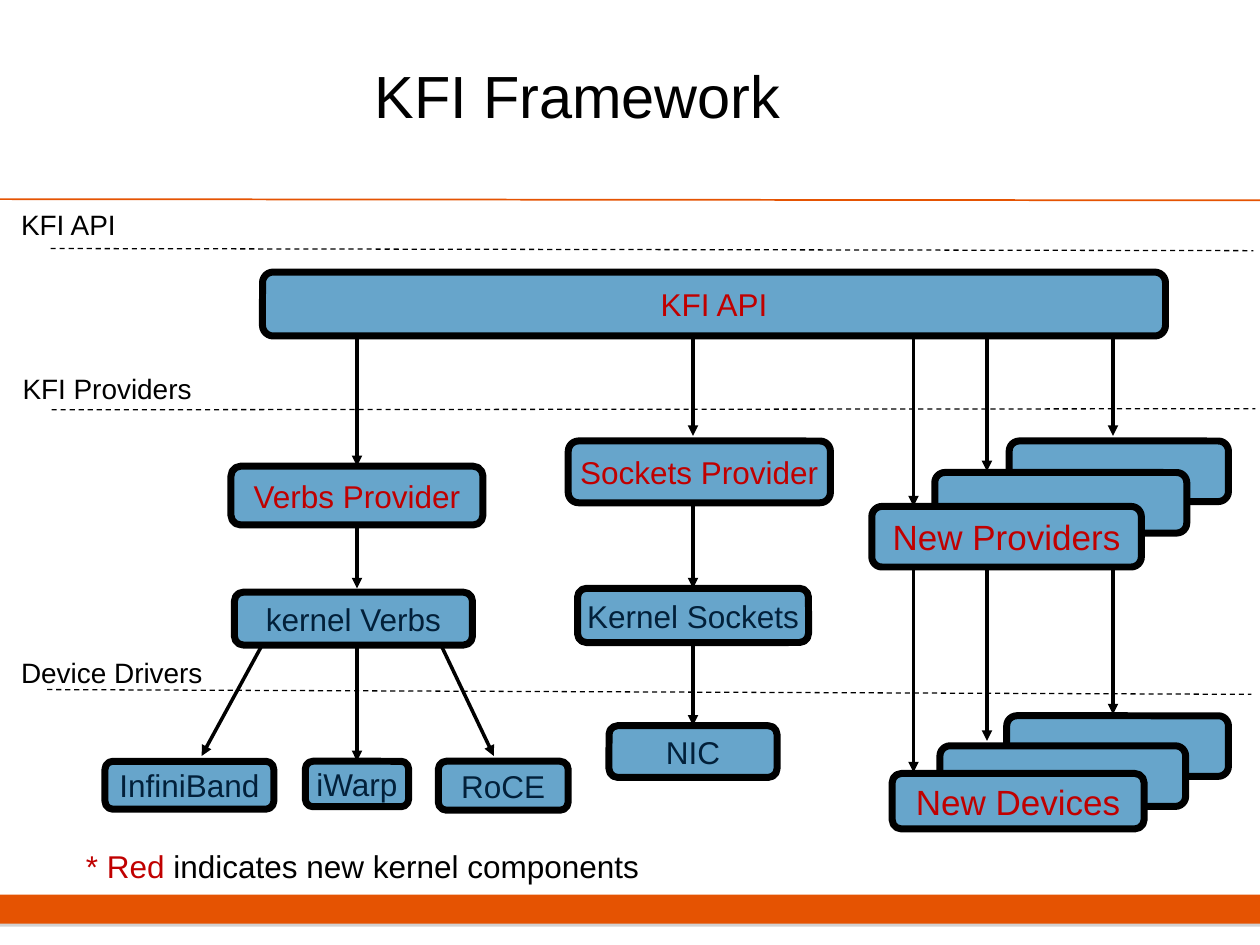
from lxml import etree
from pptx import Presentation
from pptx.dml.color import RGBColor
from pptx.enum.dml import MSO_LINE
from pptx.enum.shapes import MSO_CONNECTOR, MSO_SHAPE
from pptx.enum.text import MSO_ANCHOR, MSO_AUTO_SIZE, PP_ALIGN
from pptx.oxml.ns import qn
from pptx.util import Pt

RECT = MSO_SHAPE.RECTANGLE
ROUND = MSO_SHAPE.ROUNDED_RECTANGLE
CALLOUT = MSO_SHAPE.LINE_CALLOUT_1_NO_BORDER
STRAIGHT = MSO_CONNECTOR.STRAIGHT
DASH = MSO_LINE.DASH
MIDDLE = MSO_ANCHOR.MIDDLE
LEFT, CENTER = PP_ALIGN.LEFT, PP_ALIGN.CENTER
GROW = MSO_AUTO_SIZE.SHAPE_TO_FIT_TEXT
TOP, BOTTOM = 0, 2

ORANGE, BLUE, BLACK = "E55302", "67A5CB", "000000"
RED, NAVY, GRAY = "C00000", "02203A", "808080"


def rgb(value):
    return RGBColor.from_string(value)


def write(sp, runs, size, align=CENTER, **frame):
    tf = sp.text_frame
    for name, value in frame.items():
        setattr(tf, name, value)
    p = tf.paragraphs[0]
    p.alignment = align
    for text, color in runs:
        r = p.add_run()
        r.text = text
        for name, value in {"name": "Arial", "size": Pt(size)}.items():
            setattr(r.font, name, value)
        r.font.color.rgb = rgb(color)


def add_line(s, x1, y1, x2, y2, color, width):
    cn = s.shapes.add_connector(STRAIGHT, Pt(x1), Pt(y1), Pt(x2), Pt(y2))
    cn.line.color.rgb = rgb(color)
    cn.line.width = Pt(width)
    etree.SubElement(cn._element.spPr, qn("a:effectLst"))
    return cn


def add_arrow(s, x1, y1, x2, y2, begin=None, end=None):
    cn = add_line(s, x1, y1, x2, y2, BLACK, 2)
    etree.SubElement(cn.line._get_or_add_ln(), qn("a:tailEnd"), type="triangle")
    if begin is not None:
        cn.begin_connect(begin, BOTTOM)
    if end is not None:
        cn.end_connect(end, TOP)


def add_box(s, x, y, w, h, text="", color=NAVY, size=18):
    sp = s.shapes.add_shape(ROUND, Pt(x), Pt(y), Pt(w), Pt(h))
    sp.shadow.inherit = False
    sp.fill.solid()
    sp.fill.fore_color.rgb = rgb(BLUE)
    sp.line.color.rgb = rgb(BLACK)
    sp.line.width = Pt(4)
    if text:
        write(sp, [(text, color)], size, vertical_anchor=MIDDLE, word_wrap=False)
    return sp


def add_header(s, x, y, w, h):
    sp = s.shapes.add_textbox(Pt(x + 36), Pt(y + 18), Pt(588), Pt(72))
    write(sp, [("KFI Framework", BLACK)], 34,
          vertical_anchor=MIDDLE, word_wrap=True)
    add_line(s, x, y + h - 0.7, x + w, y + h, ORANGE, 1)


def add_footer(s, x, y, w, h):
    sp = s.shapes.add_shape(RECT, Pt(x), Pt(y), Pt(w), Pt(h))
    sp.shadow.inherit = False
    sp.fill.solid()
    sp.fill.fore_color.rgb = rgb(ORANGE)
    sp.line.fill.background()
    effects = sp._element.spPr.find(qn("a:effectLst"))
    shadow = etree.SubElement(effects, qn("a:outerShdw"), blurRad="0",
                              dist=str(Pt(1.8)), dir="5400000", rotWithShape="0")
    shade = etree.SubElement(shadow, qn("a:srgbClr"), val=GRAY)
    etree.SubElement(shade, qn("a:alpha"), val="35000")


def add_tier(s, x, y, w, h, text, adjustments):
    sp = s.shapes.add_shape(CALLOUT, Pt(x), Pt(y), Pt(w), Pt(h))
    sp.shadow.inherit = False
    sp.fill.background()
    sp.line.color.rgb = rgb(BLACK)
    sp.line.width = Pt(0.75)
    sp.line.dash_style = DASH
    for i, value in enumerate(adjustments):
        sp.adjustments[i] = value
    write(sp, [(text, BLACK)], 16, LEFT, vertical_anchor=MIDDLE, word_wrap=True)


def add_verbs(s, x, y):
    axis = x + 144
    provider = add_box(s, x + 72, y + 74.4, 144, 33.6, "Verbs Provider", RED)
    add_box(s, x + 74, y + 146.4, 136, 30.2, "kernel Verbs")
    add_box(s, x, y + 243, 96.5, 27.4, "InfiniBand")
    iwarp = add_box(s, x + 114.5, y + 243, 59, 26, "iWarp")
    add_box(s, x + 190.5, y + 243, 74.2, 28, "RoCE")
    add_arrow(s, axis, y, axis, y + 72, end=provider)
    add_arrow(s, axis, y + 108, axis, y + 144.2, begin=provider)
    add_arrow(s, x + 89.8, y + 176.6, x + 55.2, y + 240)
    add_arrow(s, axis, y + 176.6, axis, y + 240, end=iwarp)
    add_arrow(s, x + 192, y + 176.6, x + 222.2, y + 240)


def add_sockets(s, x, y):
    axis = x + 72
    add_box(s, x + 0.7, y + 60, 149.8, 35.3, "Sockets Provider", RED)
    kernel = add_box(s, x + 6, y + 144.2, 132, 31, "Kernel Sockets")
    nic = add_box(s, x + 24, y + 222.7, 96, 29.5, "NIC")
    add_arrow(s, axis, y, axis, y + 57.1)
    add_arrow(s, axis, y + 97.4, axis, y + 144.2, end=kernel)
    add_arrow(s, axis, y + 175.2, axis, y + 222.7, begin=kernel, end=nic)


def add_stack(s, x, y, boxes, text, arrow_top, arrow_ends):
    *back, front = boxes
    for dx, dy, w, h in back:
        add_box(s, x + dx, y + dy, w, h)
    dx, dy, w, h = front
    add_box(s, x + dx, y + dy, w, h, text, RED, 20)
    for ax, end in zip((24, 66, 138), arrow_ends):
        add_arrow(s, x + ax, y + arrow_top, x + ax, y + end)


def add_legend(s, x, y, w, h):
    sp = s.shapes.add_textbox(Pt(x), Pt(y), Pt(w), Pt(h))
    write(sp, [("* Red", RED), (" indicates new kernel components", BLACK)], 18,
          LEFT, word_wrap=True, auto_size=GROW)


def main():
    prs = Presentation()
    prs.slide_width, prs.slide_height = Pt(720), Pt(540)
    s = prs.slides.add_slide(prs.slide_layouts[6])
    add_footer(s, 0, 511.2, 720, 16.6)
    add_header(s, 0, 0, 720, 114.5)
    tiers = [
        (5, 120.2, 98, 15.8, "KFI API", (1.384, 0.244, 1.461, 7.258)),
        (5.8, 216, 124.6, 12.2, "KFI Providers", (1.495, 0.19, 1.443, 5.711)),
        (5, 378, 132.5, 12.2, "Device Drivers", (1.32, 0.166, 1.542, 5.36)),
    ]
    for tier in tiers:
        add_tier(s, *tier)
    add_box(s, 150, 155.5, 516, 36.5, "KFI API", RED)
    add_verbs(s, 60, 192)
    add_sockets(s, 324, 192)
    providers = [(78.7, 60, 125.3, 34.6), (36.2, 78, 144, 34.6),
                 (0.2, 97.4, 154, 34.6)]
    devices = [(77.3, 217, 126.7, 34.6), (39.1, 234.2, 140.4, 34.6),
               (11.8, 250, 144, 31.7)]
    add_stack(s, 498, 192, providers, "New Providers", 0, (97.4, 77.3, 57.1))
    add_stack(s, 498, 192, devices, "New Devices", 132, (249.4, 231.4, 216.2))
    add_legend(s, 42, 480.2, 372, 29)
    prs.save("out.pptx")


if __name__ == "__main__":
    main()
